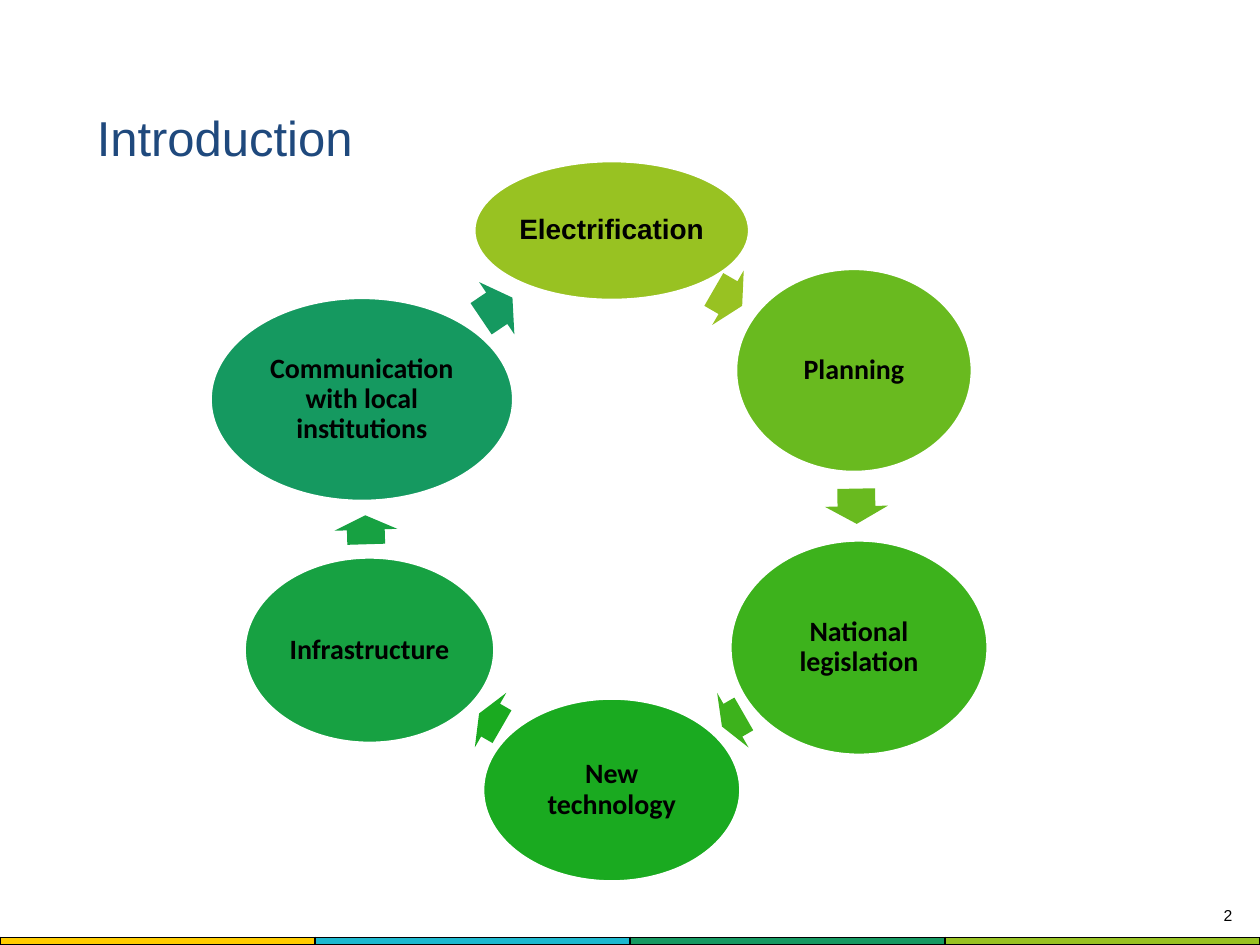
from collections import namedtuple
from dataclasses import dataclass
from math import atan2, cos, degrees, hypot, radians, sin

from lxml.etree import SubElement
from pptx import Presentation
from pptx.dml.color import RGBColor
from pptx.enum.shapes import MSO_SHAPE
from pptx.enum.text import MSO_ANCHOR, PP_ALIGN
from pptx.oxml.ns import qn
from pptx.util import Inches, Pt


@dataclass(frozen=True)
class Theme:
    wide: float = 10
    high: float = 7.5
    head: str = "Arial"
    body: str = "Calibri"
    title: int = 28
    label: int = 16
    small: int = 9
    ink: str = "000000"
    navy: str = "1F497D"
    white: str = "FFFFFF"
    bands: tuple = ("FFCC00", "1CB8CF", "159961", "98C222")


THEME = Theme()
HUB = (4.855, 4.05)
RADIUS = 2.22
ARROW = 0.5

Node = namedtuple("Node", "text font color size nudge share length")
NODES = [
    Node("Electrification", THEME.head, "98C222", (2.19, 1.11), (0, 0), 0.48, 0.26),
    Node("Planning", THEME.body, "69BA1F", (1.88, 1.62), (0, 0), 0.49, 0.28),
    Node("National legislation", THEME.body, "3DB21C", (2.05, 1.71), (0.04, -0.02), 0.51, 0.2),
    Node("New technology", THEME.body, "1AAA20", (2.05, 1.46), (0, 0), 0.5, 0.21),
    Node("Infrastructure", THEME.body, "17A142", (1.99, 1.48), (0, 0), 0.48, 0.23),
    Node("Communication with local institutions", THEME.body, "159960",
         (2.41, 1.62), (-0.06, 0.23), 0.54, 0.3),
]


def paint(fill, color):
    fill.solid()
    fill.fore_color.rgb = RGBColor.from_string(color)


def write(shape, text, font, size, color, align, pads, bold=False):
    frame = shape.text_frame
    frame.word_wrap = True
    frame.margin_left = frame.margin_right = Inches(pads[0])
    frame.margin_top = frame.margin_bottom = Inches(pads[1])
    frame.text = text
    para = frame.paragraphs[0]
    para.alignment = align
    face = para.runs[0].font
    face.name, face.size, face.bold = font, Pt(size), bold
    face.color.rgb = RGBColor.from_string(color)
    return frame


def center(slide, kind, spot, size, color):
    left, top = (mid - span / 2 for mid, span in zip(spot, size))
    shape = slide.shapes.add_shape(kind, *map(Inches, (left, top, *size)))
    shape.shadow.inherit = False
    paint(shape.fill, color)
    return shape


def place(index, node):
    turn = radians(index * 360 / len(NODES) - 90)
    return (HUB[0] + RADIUS * cos(turn) + node.nudge[0],
            HUB[1] + RADIUS * sin(turn) + node.nudge[1])


def bubble(slide, node, spot):
    shape = center(slide, MSO_SHAPE.OVAL, spot, node.size, node.color)
    paint(shape.line.fill, THEME.white)
    shape.line.width = Pt(2)
    frame = write(shape, node.text, node.font, THEME.label, THEME.ink,
                  PP_ALIGN.CENTER, (0.02, 0.02), True)
    frame.vertical_anchor = MSO_ANCHOR.MIDDLE
    frame.paragraphs[0].line_spacing = 0.9


def arrow(slide, node, start, end):
    step = [b - a for a, b in zip(start, end)]
    spot = [a + node.share * d for a, d in zip(start, step)]
    shape = center(slide, MSO_SHAPE.RIGHT_ARROW, spot, (node.length, ARROW), node.color)
    shape.line.fill.background()
    shape.adjustments[0] = 0.6
    shape.adjustments[1] = 0.5
    shape.rotation = degrees(atan2(step[1], step[0])) % 360


def cycle(slide):
    spots = [place(index, node) for index, node in enumerate(NODES)]
    for node, spot, after in zip(NODES, spots, spots[1:] + spots[:1]):
        bubble(slide, node, spot)
        arrow(slide, node, spot, after)


def footer(slide):
    deep = 0.06
    frame = slide.shapes.add_table(1, len(THEME.bands), 0, Inches(THEME.high - deep),
                                   Inches(THEME.wide), Inches(deep))
    table = frame.table
    table.first_row = table.horz_banding = False
    props = table._tbl.tblPr
    for style in props.findall(qn("a:tableStyleId")):
        props.remove(style)
    for cell, color in zip(table.rows[0].cells, THEME.bands):
        paint(cell.fill, color)
        cell.margin_left = cell.margin_right = cell.margin_top = cell.margin_bottom = 0
        SubElement(cell.text_frame.paragraphs[0]._p, qn("a:endParaRPr"), sz="100")


def label(slide, box, *style):
    shape = slide.shapes.add_textbox(*map(Inches, box))
    return write(shape, *style)


def main():
    deck = Presentation()
    deck.slide_width, deck.slide_height = Inches(THEME.wide), Inches(THEME.high)
    slide = deck.slides.add_slide(deck.slide_layouts[6])
    footer(slide)
    label(slide, (7.91, 7.14, 1.97, 0.31), "2", THEME.head, THEME.small,
          THEME.ink, PP_ALIGN.RIGHT, (0.1, 0.05))
    title = label(slide, (0.67, 0.78, 9, 0.61), "Introduction", THEME.head, THEME.title,
                  THEME.navy, PP_ALIGN.LEFT, (0.1, 0.1))
    title.vertical_anchor = MSO_ANCHOR.MIDDLE
    cycle(slide)
    deck.save("out.pptx")


if __name__ == "__main__":
    main()
